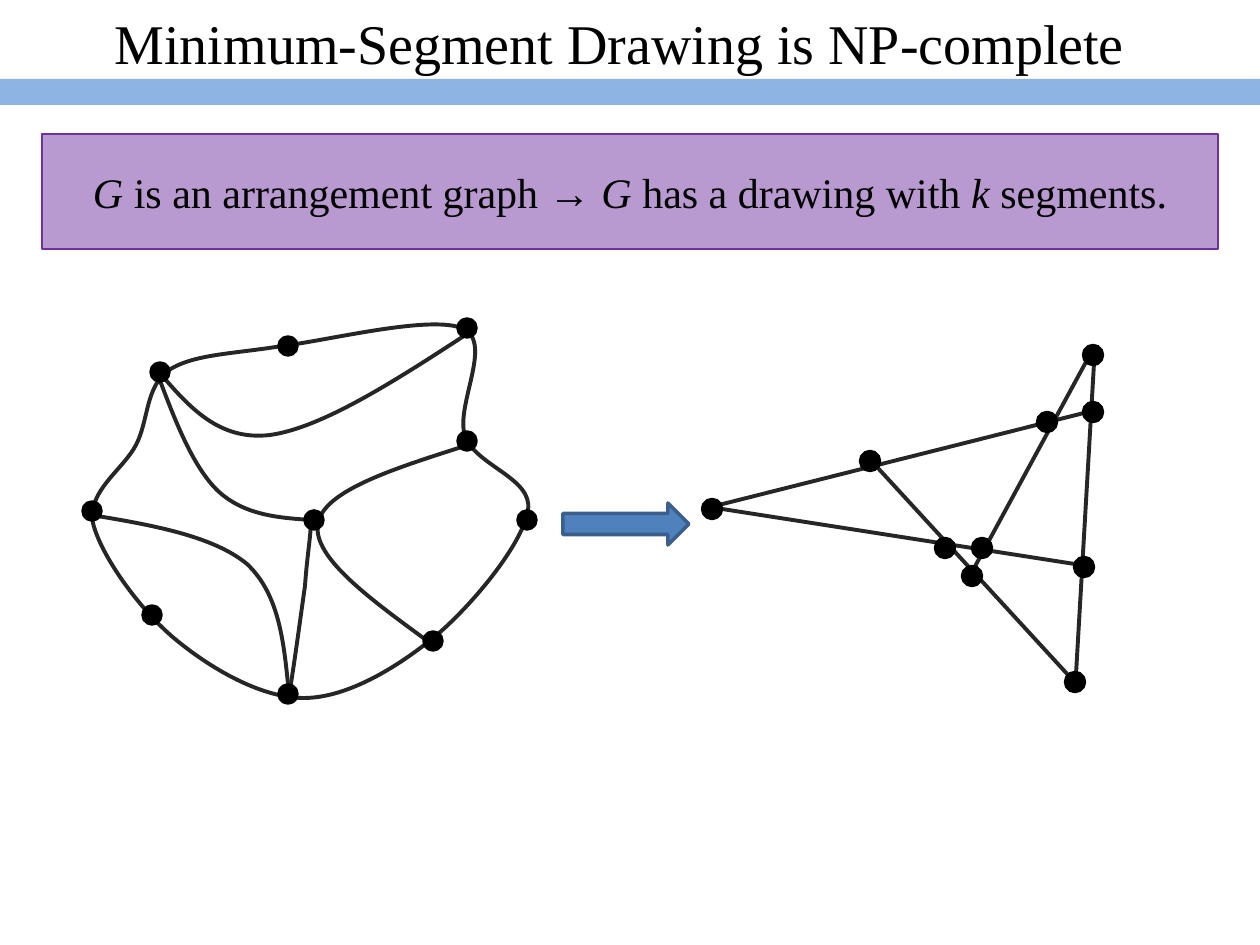
import pptx
import pptx.util
import pptx.dml.color
import pptx.enum.shapes
import pptx.enum.text
import pptx.oxml.ns
import lxml.etree

COLORS = {
    "black": "000000",
    "edge": "262626",
    "band": "8EB4E3",
    "arrow": "4F81BD",
    "rim": "3A5F8C",
    "violet": "7030A0",
}
FONT = "Times New Roman"
SHAPE = pptx.enum.shapes.MSO_SHAPE

OUTLINE = [
    (198, 32), (149, 40), (110, 40), (85, 56), (61, 73), (65, 106), (52, 131),
    (39, 156), (3, 177), (9, 209), (17, 242), (56, 296), (91, 325),
    (126, 354), (178, 385), (222, 384), (266, 383), (317, 351), (354, 320),
    (391, 288), (439, 229), (444, 196), (449, 164), (392, 152), (381, 122),
    (371, 92), (409, 30), (380, 15), (349, 0), (247, 26), (198, 32),
]
CURVES = [
    [(75, 58), (105, 93), (135, 127), (186, 121), (237, 114), (308, 69), (380, 22)],
    [(7, 201), (68, 211), (129, 222), (163, 250), (196, 281), (200, 330), (205, 379)],
    [(349, 331), (289, 287), (228, 244), (234, 210), (239, 177), (309, 155), (381, 132)],
    [(72, 56), (90, 104), (108, 152), (134, 177), (160, 201), (194, 204), (228, 206)],
    [(227, 210), (226, 228), (223, 244), (221, 272), (217, 300), (212, 338), (206, 376)],
]
GRAPH_DOTS = [
    (204, 32), (383, 14), (76, 58), (8, 197), (68, 301),
    (204, 380), (230, 206), (383, 127), (443, 206), (349, 327),
]
SEGMENTS = [
    ((20, 165), (392, 223)),
    ((392, 20), (373, 348)),
    ((384, 18), (264, 239)),
    ((175, 123), (379, 345)),
    ((1, 165), (382, 69)),
]
SEGMENT_DOTS = [
    (10, 165), (168, 117), (345, 78), (391, 68), (391, 11),
    (382, 223), (243, 204), (280, 204), (270, 232), (373, 338),
]


def px(n):
    return pptx.util.Emu(round(n * 914400 / 126))


def color(name):
    return pptx.dml.color.RGBColor.from_string(COLORS[name])


def stroke(line, name, width):
    line.color.rgb = color(name)
    line.width = pptx.util.Pt(width)


def add_solid(shapes, kind, box, fill, rim=None, width=2):
    shape = shapes.add_shape(kind, *map(px, box))
    shape.shadow.inherit = False
    shape.fill.solid()
    shape.fill.fore_color.rgb = color(fill)
    if rim:
        stroke(shape.line, rim, width)
    else:
        shape.line.fill.background()
    return shape


def add_dots(shapes, box, dots, size):
    for x, y in dots:
        spot = (box[0] + x - size / 2, box[1] + y - size / 2, size, size)
        add_solid(shapes, SHAPE.OVAL, spot, "black", "black")


def bend(curve):
    lines = list(curve._element.iter(pptx.oxml.ns.qn("a:lnTo")))
    for i in range(0, len(lines), 3):
        arc = lxml.etree.Element(pptx.oxml.ns.qn("a:cubicBezTo"))
        lines[i].addprevious(arc)
        for line in lines[i:i + 3]:
            arc.append(line[0])
            line.getparent().remove(line)


def add_curve(shapes, box, knots):
    points = [(px(box[0] + x), px(box[1] + y)) for x, y in knots]
    pen = shapes.build_freeform(*points[0], scale=1.0)
    pen.add_line_segments(points[1:], close=False)
    curve = pen.convert_to_shape()
    bend(curve)
    if knots[0] == knots[-1]:
        track = next(curve._element.iter(pptx.oxml.ns.qn("a:path")))
        lxml.etree.SubElement(track, pptx.oxml.ns.qn("a:close"))
    curve.shadow.inherit = False
    curve.fill.background()
    stroke(curve.line, "edge", 2.25)


def add_line(shapes, box, start, end):
    ends = [px(box[axis] + point[axis]) for point in (start, end) for axis in (0, 1)]
    line = shapes.add_connector(pptx.enum.shapes.MSO_CONNECTOR.STRAIGHT, *ends)
    stroke(line.line, "edge", 2.25)
    lxml.etree.SubElement(line._element.spPr, pptx.oxml.ns.qn("a:effectLst"))


def style_text(frame, size):
    frame.word_wrap = True
    frame.vertical_anchor = pptx.enum.text.MSO_ANCHOR.MIDDLE
    para = frame.paragraphs[0]
    para.alignment = pptx.enum.text.PP_ALIGN.CENTER
    para.font.name = FONT
    para.font.size = pptx.util.Pt(size)
    para.font.color.rgb = color("black")


def add_header(slide, box):
    left, top, width, height = box
    title = slide.shapes.title
    title.left, title.top = px(left + 53), px(top + 11)
    title.width, title.height = px(width - 126), px(63)
    title.text_frame.text = "Minimum-Segment Drawing is NP-complete"
    style_text(title.text_frame, 32)
    add_solid(slide.shapes, SHAPE.RECTANGLE, (left, top + height - 26, width, 26), "band")


def add_drawing(slide, box):
    shapes = slide.shapes.add_group_shape().shapes
    for start, end in SEGMENTS:
        add_line(shapes, box, start, end)
    add_dots(shapes, box, SEGMENT_DOTS, 19)


def add_graph(slide, box):
    shapes = slide.shapes.add_group_shape().shapes
    for knots in [OUTLINE, *CURVES]:
        add_curve(shapes, box, knots)
    add_dots(shapes, box, GRAPH_DOTS, 18)


def add_claim(slide, box):
    claim = add_solid(slide.shapes, SHAPE.RECTANGLE, box, "violet", "violet", 1)
    tint = claim._element.spPr.find(".//" + pptx.oxml.ns.qn("a:srgbClr"))
    lxml.etree.SubElement(tint, pptx.oxml.ns.qn("a:alpha"), val="49000")
    style_text(claim.text_frame, 24)
    parts = ["G ", "is an arrangement graph → ", "G ", "has a drawing with ", "k", " segments."]
    for i, part in enumerate(parts):
        run = claim.text_frame.paragraphs[0].add_run()
        run.text = part
        run.font.italic = i % 2 == 0


def main():
    deck = pptx.Presentation()
    deck.slide_width, deck.slide_height = px(1260), px(945)
    slide = deck.slides.add_slide(deck.slide_layouts[5])
    add_header(slide, (0, 0, 1260, 105))
    add_drawing(slide, (702, 344))
    add_graph(slide, (84, 314))
    add_solid(slide.shapes, SHAPE.RIGHT_ARROW, (563, 503, 126, 42), "arrow", "rim")
    add_claim(slide, (42, 134, 1176, 115))
    deck.save("out.pptx")


if __name__ == "__main__":
    main()
